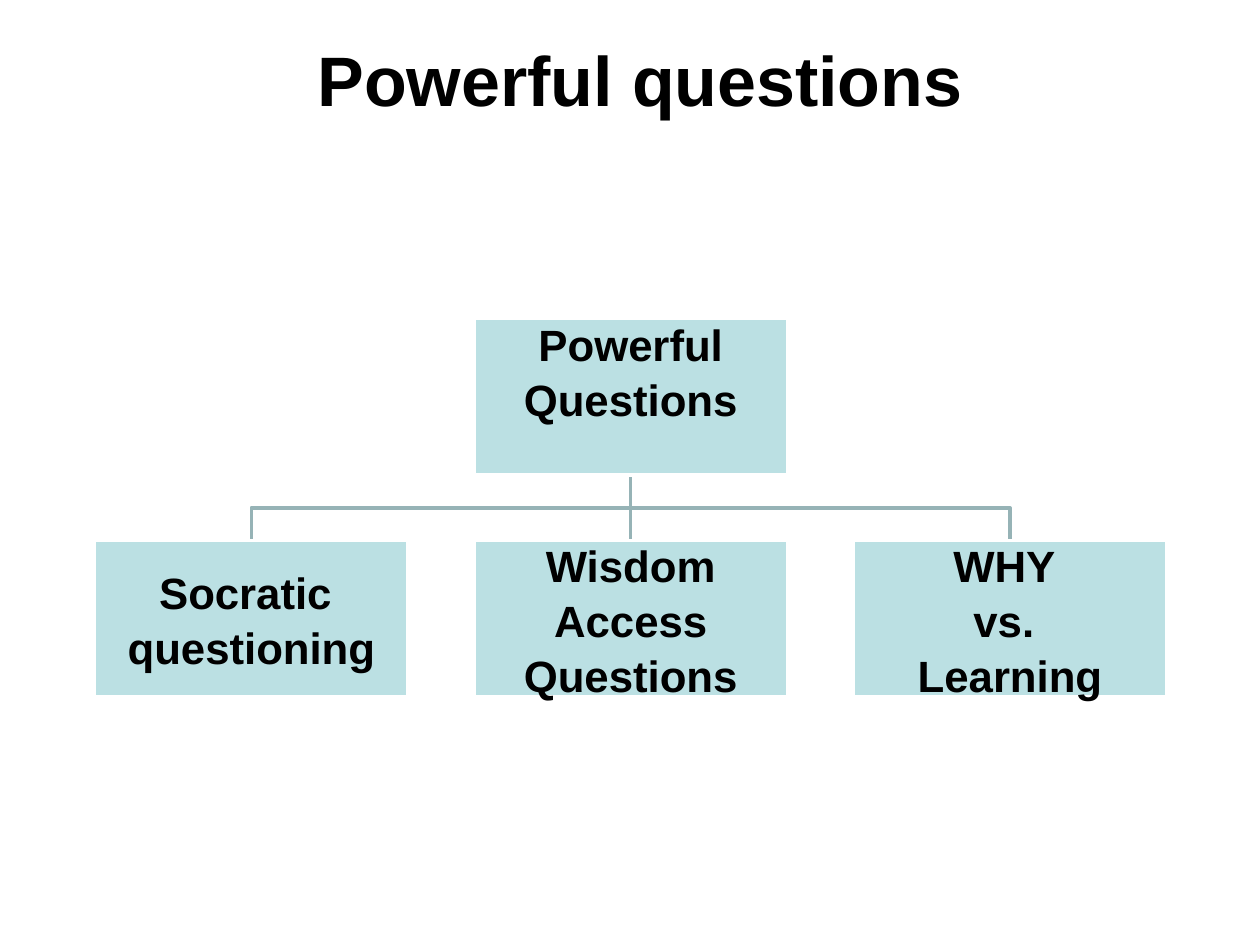
from lxml.etree import SubElement
from pptx import Presentation
from pptx.dml.color import RGBColor
from pptx.enum.shapes import MSO_CONNECTOR, MSO_SHAPE
from pptx.enum.text import MSO_ANCHOR, PP_ALIGN
from pptx.oxml.ns import qn
from pptx.util import Inches, Pt

BLACK, WHITE, TEAL, GREY_TEAL = "000000", "FFFFFF", "BBE0E3", "96B3B6"
BOX_WIDTH, BOX_HEIGHT = 2.49, 1.24
GAP_X, GAP_Y = 0.52, 0.52
INSET, LINE_HEIGHT = 0.02, 0.42

ROOT = ["Powerful", "Questions"]
BRANCHES = [
    ["Socratic ", "questioning"],
    ["Wisdom Access Questions"],
    ["WHY ", "vs. ", "Learning"],
]


def color(hex_string):
    return RGBColor.from_string(hex_string)


def set_line(line, hex_string):
    line.color.rgb = color(hex_string)
    line.width = Pt(2)


def write(frame, lines, size, spacing=1.0):
    frame.word_wrap = True
    frame.vertical_anchor = MSO_ANCHOR.MIDDLE
    for index, words in enumerate(lines):
        paragraph = frame.add_paragraph() if index else frame.paragraphs[0]
        paragraph.alignment = PP_ALIGN.CENTER
        paragraph.line_spacing = spacing
        run = paragraph.add_run()
        run.text = words
        run.font.name = "Arial"
        run.font.size = Pt(size)
        run.font.bold = True
        run.font.color.rgb = color(BLACK)


def add_title(slide, left, top, width, height):
    title = slide.shapes.add_textbox(*map(Inches, (left, top, width, height)))
    write(title.text_frame, ["Powerful questions"], 40)


def add_topic(slide, lines, left, top, space_below=0.0):
    topic = slide.shapes.add_shape(
        MSO_SHAPE.RECTANGLE, *map(Inches, (left, top, BOX_WIDTH, BOX_HEIGHT)))
    topic.shadow.inherit = False
    topic.fill.solid()
    topic.fill.fore_color.rgb = color(TEAL)
    set_line(topic.line, WHITE)
    frame = topic.text_frame
    frame.margin_left = frame.margin_right = frame.margin_top = Inches(INSET)
    frame.margin_bottom = Inches(INSET + space_below)
    write(frame, lines, 25, 1.05)
    return topic


def add_elbow(slide, start_x, start_y, end_x, end_y):
    middle_y = (start_y + end_y) / 2
    builder = slide.shapes.build_freeform(Inches(start_x), Inches(start_y))
    builder.add_line_segments(
        [(Inches(x), Inches(y)) for x, y in
         ((start_x, middle_y), (end_x, middle_y), (end_x, end_y))],
        close=False)
    elbow = builder.convert_to_shape()
    elbow.shadow.inherit = False
    elbow.fill.background()
    set_line(elbow.line, GREY_TEAL)


def add_stem(slide, x, start_y, end_y):
    stem = slide.shapes.add_connector(
        MSO_CONNECTOR.STRAIGHT, *map(Inches, (x, start_y, x, end_y)))
    set_line(stem.line, GREY_TEAL)
    SubElement(stem._element.spPr, qn("a:effectLst"))
    return stem


def add_hierarchy(slide, left, top):
    """Root topic centred over its branches; lines lie behind the boxes."""
    lefts = [left + i * (BOX_WIDTH + GAP_X) for i in range(len(BRANCHES))]
    centers = [x + BOX_WIDTH / 2 for x in lefts]
    middle = len(BRANCHES) // 2
    root_bottom = top + BOX_HEIGHT
    branch_top = root_bottom + GAP_Y

    for center in reversed(centers):
        if center == centers[middle]:
            stem = add_stem(slide, center, root_bottom, branch_top)
        else:
            add_elbow(slide, centers[middle], root_bottom, center, branch_top)

    root = add_topic(slide, ROOT, lefts[middle], top, space_below=LINE_HEIGHT)
    branches = [add_topic(slide, lines, x, branch_top)
                for lines, x in zip(BRANCHES, lefts)]
    stem.begin_connect(root, 2)
    stem.end_connect(branches[middle], 0)


def main():
    presentation = Presentation()
    presentation.slide_width = Inches(10)
    presentation.slide_height = Inches(7.5)
    slide = presentation.slides.add_slide(presentation.slide_layouts[6])
    add_hierarchy(slide, 0.75, 2.53)
    add_title(slide, 0.83, 0, 8.5, 1.25)
    presentation.save("out.pptx")


if __name__ == "__main__":
    main()
